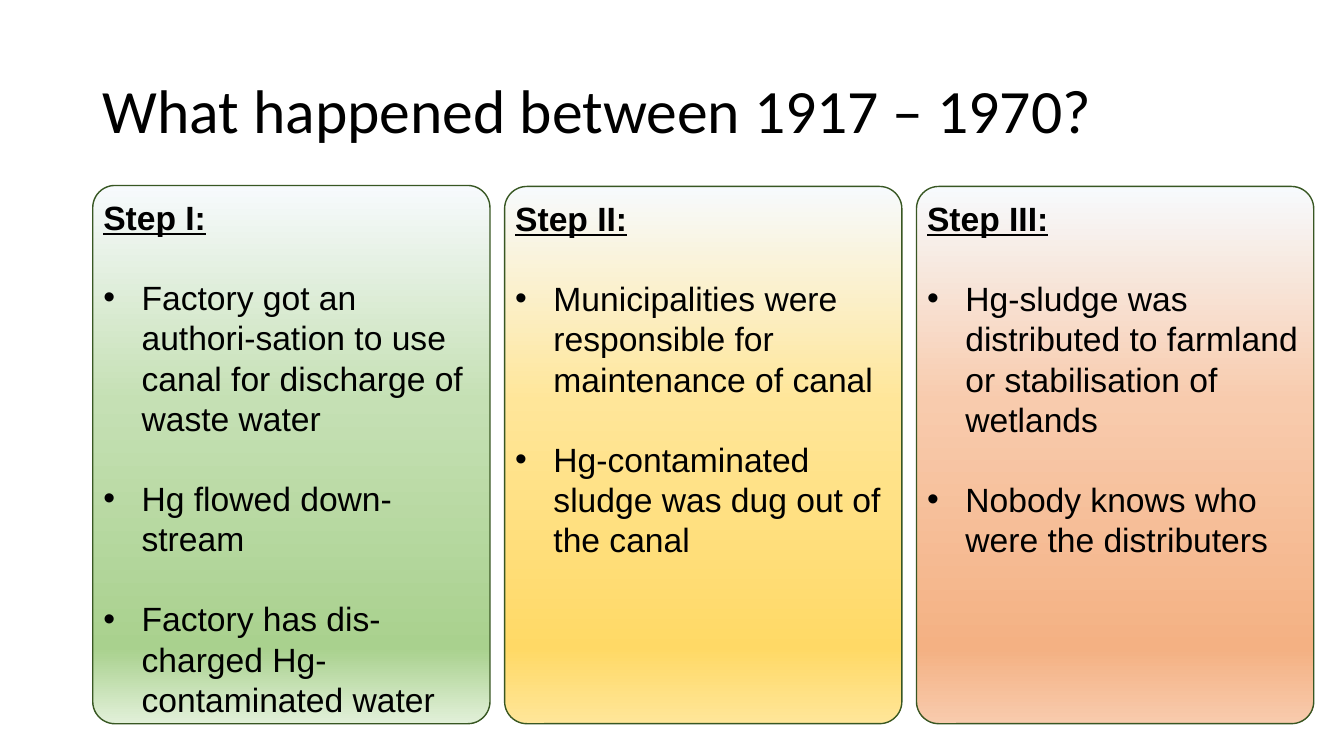
from lxml import etree
from pptx import Presentation
from pptx import util as u
from pptx.dml.color import RGBColor
from pptx.enum import shapes, text
from pptx.oxml import ns

BLACK = RGBColor(0x00, 0x00, 0x00)
OUTLINE = RGBColor(0x38, 0x57, 0x23)
PALE = RGBColor(0xF7, 0xFA, 0xFD)
GREEN_LIGHT = RGBColor(0xC5, 0xE0, 0xB4)
GREEN = RGBColor(0xA9, 0xD1, 0x8E)
GREEN_PALE = RGBColor(0xE2, 0xF0, 0xD9)
YELLOW_LIGHT = RGBColor(0xFF, 0xE6, 0x99)
YELLOW = RGBColor(0xFF, 0xD9, 0x66)
ORANGE_LIGHT = RGBColor(0xF8, 0xCB, 0xAD)
ORANGE = RGBColor(0xF4, 0xB1, 0x83)

STOPS = (0, 40, 86, 100)  # gradient positions in percent
CARD_LEFT, CARD_PITCH, CARD_WIDTH = 0.92, 4.085, 3.94
CARD_BOTTOM = 7.18
LINE_HEIGHT = 28.7  # points, also the gap between paragraphs

# Heading, card top, gradient colours, bullet points
STEPS = [
    ("Step I:", 1.84, (PALE, GREEN_LIGHT, GREEN, GREEN_PALE),
     ["Factory got an authori-sation to use canal for discharge of waste water",
      "Hg flowed down-stream",
      "Factory has dis-charged Hg-contaminated water"]),
    ("Step II:", 1.85, (PALE, YELLOW_LIGHT, YELLOW, YELLOW_LIGHT),
     ["Municipalities were responsible for maintenance of canal",
      "Hg-contaminated sludge was dug out of the canal"]),
    ("Step III:", 1.85, (PALE, ORANGE_LIGHT, ORANGE, ORANGE_LIGHT),
     ["Hg-sludge was distributed to farmland or stabilisation of wetlands",
      "Nobody knows who were the distributers"]),
]


def write(para, words, font="Arial", size=24, bold=False, underline=False):
    span = para.add_run()
    span.text = words
    span.font.name = font
    span.font.size = u.Pt(size)
    span.font.bold = bold
    span.font.underline = underline
    span.font.color.rgb = BLACK
    para.alignment = text.PP_ALIGN.LEFT


def add_bullet(para):
    properties = para._p.get_or_add_pPr()
    properties.set("marL", str(u.Inches(0.38)))
    properties.set("indent", str(-u.Inches(0.38)))
    font = etree.SubElement(properties, ns.qn("a:buFont"))
    font.set("typeface", "Arial")
    etree.SubElement(properties, ns.qn("a:buChar")).set("char", "•")


def fill_gradient(card, colours):
    card.fill.gradient()
    card.fill.gradient_angle = 270  # top to bottom
    stops = card._element.spPr.find(".//" + ns.qn("a:gsLst"))
    for stop in list(stops):
        stops.remove(stop)
    for position, colour in zip(STOPS, colours):
        stop = etree.SubElement(stops, ns.qn("a:gs"), pos=str(position * 1000))
        etree.SubElement(stop, ns.qn("a:srgbClr"), val=str(colour))


def add_title(page, words):
    title = page.shapes.title
    title.left, title.top = u.Inches(0.92), u.Inches(0.4)
    title.width, title.height = u.Inches(11.5), u.Inches(1.45)
    frame = title.text_frame
    frame.vertical_anchor = text.MSO_ANCHOR.MIDDLE
    frame.paragraphs[0].line_spacing = 0.9
    write(frame.paragraphs[0], words, font="Calibri", size=44)


def add_card(page, left, top, heading, colours, points):
    card = page.shapes.add_shape(
        shapes.MSO_SHAPE.ROUNDED_RECTANGLE, u.Inches(left), u.Inches(top),
        u.Inches(CARD_WIDTH), u.Inches(CARD_BOTTOM - top))
    card.adjustments[0] = 0.056
    card.shadow.inherit = False
    card.line.color.rgb = OUTLINE
    card.line.width = u.Pt(1)
    fill_gradient(card, colours)

    frame = card.text_frame
    frame.word_wrap = True
    frame.vertical_anchor = text.MSO_ANCHOR.TOP
    frame.margin_left = frame.margin_right = u.Inches(0.04)
    frame.margin_top = frame.margin_bottom = u.Inches(0.05)
    write(frame.paragraphs[0], heading, bold=True, underline=True)
    for point in points:
        para = frame.add_paragraph()
        para.space_before = u.Pt(LINE_HEIGHT)
        write(para, point)
        add_bullet(para)
    for para in frame.paragraphs:
        para.line_spacing = u.Pt(LINE_HEIGHT)


def main():
    deck = Presentation()
    deck.slide_width, deck.slide_height = u.Inches(13.33), u.Inches(7.5)
    page = deck.slides.add_slide(deck.slide_layouts[5])
    add_title(page, "What happened between 1917 – 1970?")

    # One card per step, evenly spaced
    for index, (heading, top, colours, points) in enumerate(STEPS):
        left = CARD_LEFT + index * CARD_PITCH
        add_card(page, left, top, heading, colours, points)
    deck.save("out.pptx")


if __name__ == "__main__":
    main()
